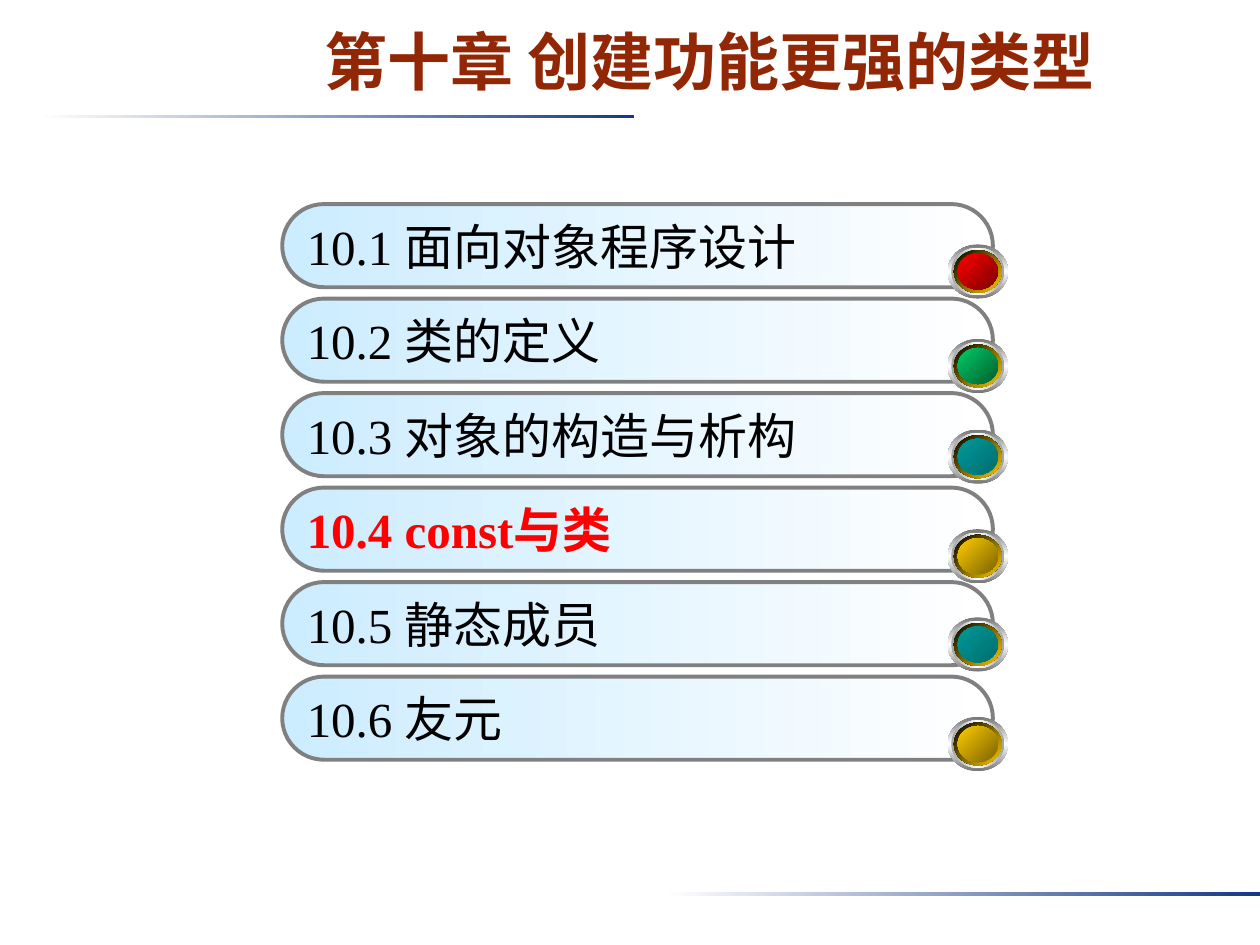
import pptx
import pptx.util
import pptx.oxml
import pptx.oxml.ns
import pptx.dml.color
import pptx.enum.shapes
import pptx.enum.text
from lxml import etree

Inches = pptx.util.Inches
Pt = pptx.util.Pt
RGB = pptx.dml.color.RGBColor.from_string
SHAPES = pptx.enum.shapes.MSO_SHAPE
qn = pptx.oxml.ns.qn

WHITE = RGB("FFFFFF")
BLACK = RGB("000000")
NAVY = RGB("133984")
TITLE_BROWN = RGB("922706")
HIGHLIGHT = RGB("FF0000")
BAR_BLUE = RGB("CCECFF")
BAR_EDGE = RGB("808080")
RIM_DARK = RGB("767676")
RIM_LIGHT = RGB("A2A2A2")
GOLD = RGB("FFCC00")
TEAL = RGB("009999")
DEEP_TEAL = RGB("007575")

RED_GEM = (RGB("FF0000"), RGB("7C0000"))
GREEN_GEM = (RGB("00CC66"), RGB("005E2F"))
TEAL_GEM = (TEAL, RGB("006D6D"))
GOLD_GEM = (GOLD, RGB("7C6300"))

# Section, gem colours, gem top below the top of its bar
SECTIONS = [
    ("10.1 面向对象程序设计", RED_GEM, 0.32),
    ("10.2 类的定义", GREEN_GEM, 0.32),
    ("10.3 对象的构造与析构", TEAL_GEM, 0.29),
    ("10.4 const与类", GOLD_GEM, 0.33),
    ("10.5 静态成员", TEAL_GEM, 0.28),
    ("10.6 友元", GOLD_GEM, 0.32),
]
CURRENT_SECTION = 3
BAR_PITCH, BAR_HEIGHT = 0.75, 0.66
GEM_WIDTH, GEM_HEIGHT = 0.48, 0.43

# Inset from the gem's edge, clockwise gradient angle, evenly spaced colours
GEM_RINGS = [
    (0, 90, (RIM_DARK, WHITE, RIM_DARK)),
    (0.03, 0, (RIM_LIGHT, WHITE, RIM_LIGHT)),
    (0.05, 45, (WHITE, TEAL, WHITE)),
    (0.05, 45, (BLACK, GOLD)),
    (0.08, 315, (DEEP_TEAL, TEAL, DEEP_TEAL)),
]


def add_gradient_shape(shapes, kind, left, top, width, height, colors, angle=0):
    """Add a shape without outline; angle runs clockwise from left to right."""
    shape = shapes.add_shape(
        kind, Inches(left), Inches(top), Inches(width), Inches(height))
    shape.shadow.inherit = False
    shape.line.fill.background()
    shape.fill.gradient()
    shape.fill.gradient_angle = -angle % 360
    stops = shape._element.spPr.find(qn("a:gradFill")).find(qn("a:gsLst"))
    for stop in list(stops):
        stops.remove(stop)
    for i, color in enumerate(colors):
        stop = etree.SubElement(
            stops, qn("a:gs"), pos=str(100000 * i // (len(colors) - 1)))
        etree.SubElement(stop, qn("a:srgbClr"), val=str(color))
    return shape


def add_rule(slide, left, top, width, height):
    add_gradient_shape(slide.shapes, SHAPES.RECTANGLE, left, top, width, height,
                       (WHITE, NAVY))


def add_title(slide, left, top, width, height):
    title = slide.shapes.title
    title.left, title.top = Inches(left), Inches(top)
    title.width, title.height = Inches(width), Inches(height)
    frame = title.text_frame
    frame.text = "第十章 创建功能更强的类型"
    frame.word_wrap = True
    frame.auto_size = pptx.enum.text.MSO_AUTO_SIZE.NONE
    frame.vertical_anchor = pptx.enum.text.MSO_ANCHOR.TOP
    frame.margin_left = frame.margin_right = Inches(0.1)
    frame.margin_top, frame.margin_bottom = Inches(0.06), Inches(0.05)
    heading = frame.paragraphs[0]
    heading.alignment = pptx.enum.text.PP_ALIGN.CENTER
    heading.font.name = "Arial"
    heading.font.size = Pt(36)
    heading.font.bold = True
    heading.font.color.rgb = TITLE_BROWN


def add_gem(slide, left, top, width, height, colors):
    gem = slide.shapes.add_group_shape()
    for inset, angle, ring_colors in GEM_RINGS + [(0.08, 45, colors)]:
        # Insets shrink vertically in proportion, so every ring stays concentric
        inset_y = inset * height / width
        add_gradient_shape(
            gem.shapes, SHAPES.OVAL, left + inset, top + inset_y,
            width - 2 * inset, height - 2 * inset_y, ring_colors, angle)


def add_section_bar(slide, left, top, width, height, section, is_current):
    bar = add_gradient_shape(slide.shapes, SHAPES.ROUNDED_RECTANGLE,
                             left, top, width, height, (BAR_BLUE, WHITE))
    bar.adjustments[0] = 0.5
    bar.line.color.rgb = BAR_EDGE
    bar.line.width = Pt(2.25)
    frame = bar.text_frame
    frame.text = section
    frame.vertical_anchor = pptx.enum.text.MSO_ANCHOR.MIDDLE
    label = frame.paragraphs[0]
    label.alignment = pptx.enum.text.PP_ALIGN.LEFT
    label.font.name = "Times New Roman"
    label.font.size = Pt(28)
    label.font.bold = is_current
    label.font.color.rgb = HIGHLIGHT if is_current else BLACK


def add_contents(slide, left, top, width):
    for i, (section, gem_colors, gem_drop) in enumerate(SECTIONS):
        bar_top = top + i * BAR_PITCH
        add_section_bar(slide, left, bar_top, width, BAR_HEIGHT, section,
                        i == CURRENT_SECTION)
        add_gem(slide, left + width - 0.36, bar_top + gem_drop,
                GEM_WIDTH, GEM_HEIGHT, gem_colors)


def main():
    presentation = pptx.Presentation()
    presentation.slide_width, presentation.slide_height = Inches(10), Inches(7.5)
    slide = presentation.slides.add_slide(presentation.slide_layouts[5])
    add_rule(slide, 0.31, 0.91, 4.72, 0.03)
    add_rule(slide, 5.28, 7.08, 4.72, 0.03)
    add_title(slide, 1.38, 0.12, 8.5, 0.82)
    add_contents(slide, 2.24, 1.62, 5.64)
    presentation.save("out.pptx")


if __name__ == "__main__":
    main()
